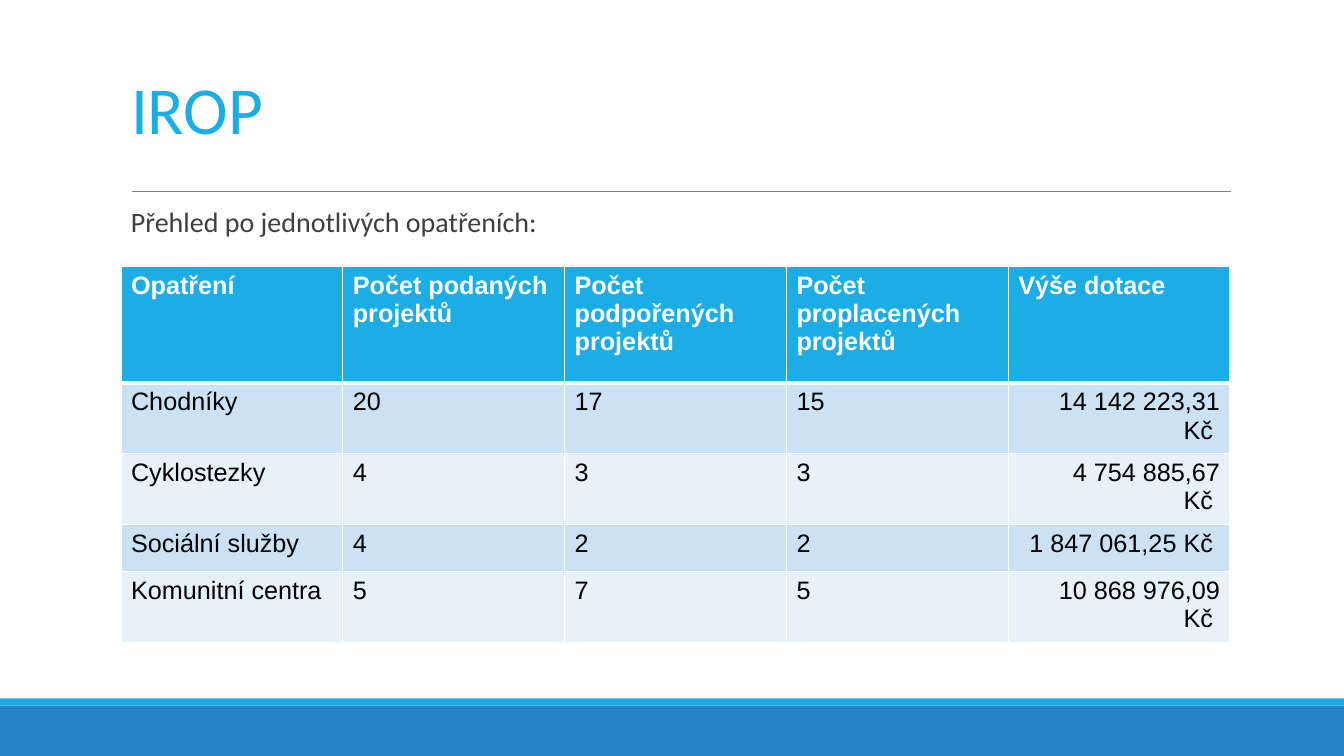
from pptx import Presentation
from pptx.dml.color import RGBColor
from pptx.enum.shapes import MSO_CONNECTOR, MSO_SHAPE
from pptx.enum.text import MSO_ANCHOR, PP_ALIGN
from pptx.oxml.ns import qn
from pptx.util import Pt
from lxml.etree import SubElement

PX = 9144  # 100 px to the inch
HUES = {"sky": "1CADE4", "blue": "2683C6", "rule": "7F7F7F", "text": "3F3F3F",
        "odd": "CBE2F5", "even": "E7F1FA", "white": "FFFFFF", "black": "000000"}
HEADS = ["Opatření", "Počet podaných projektů", "Počet podpořených projektů",
         "Počet proplacených projektů", "Výše dotace"]
ROWS = [
    ["Chodníky", "20", "17", "15", "14 142 223,31 Kč "],
    ["Cyklostezky", "4", "3", "3", "4 754 885,67 Kč "],
    ["Sociální služby", "4", "2", "2", "1 847 061,25 Kč "],
    ["Komunitní centra", "5", "7", "5", "10 868 976,09 Kč "],
]
INDENTS = [40, 40, 10, 40]  # left margins of the amounts


def emu(*sizes):
    return [size * PX for size in sizes]


def hue(name):
    return RGBColor.from_string(HUES[name])


def write(para, text, size, color, font, bold=False):
    run = para.add_run()
    run.text = text
    run.font.size = Pt(size)
    run.font.name = font
    run.font.bold = bold
    run.font.color.rgb = hue(color)


def pad(frame, side, edge):
    frame.margin_left = frame.margin_right = side * PX
    frame.margin_top = frame.margin_bottom = edge * PX
    frame.word_wrap = True


def add_band(slide, box, color):
    band = slide.shapes.add_shape(MSO_SHAPE.RECTANGLE, *emu(*box))
    band.shadow.inherit = False
    band.fill.solid()
    band.fill.fore_color.rgb = hue(color)
    band.line.fill.background()


def add_foot(slide, left, top, width, height):
    strip = 7
    add_band(slide, (left, top + strip, width, height - strip), "blue")
    add_band(slide, (left, top, width, strip), "sky")


def add_head(slide, left, top, width, height):
    # Title
    title = slide.shapes.title
    title.left, title.top, title.width, title.height = emu(left, top, width, height)
    frame = title.text_frame
    pad(frame, 10, 5)
    frame.vertical_anchor = MSO_ANCHOR.BOTTOM
    para = frame.paragraphs[0]
    para.alignment = PP_ALIGN.LEFT
    para.line_spacing = 0.85
    write(para, "IROP", 48, "sky", "Calibri")

    # Rule under the title
    level = top + height + 38
    rule = slide.shapes.add_connector(
        MSO_CONNECTOR.STRAIGHT, *emu(left + 11, level, left + width + 1, level))
    rule.line.color.rgb = hue("rule")
    rule.line.width = Pt(0.75)
    SubElement(rule.element.spPr, qn("a:effectLst"))


def add_intro(slide, left, top, width, height):
    frame = slide.shapes.add_textbox(*emu(left, top, width, height)).text_frame
    pad(frame, 10, 5)
    para = frame.paragraphs[0]
    para.line_spacing = 0.9
    write(para, "Přehled po jednotlivých opatřeních:", 20, "text", "Calibri")


def add_edges(cell, top, bottom):
    props = cell._tc.get_or_add_tcPr()
    for tag, width in (("lnL", 1), ("lnR", 1), ("lnT", top), ("lnB", bottom)):
        edge = SubElement(props, qn(f"a:{tag}"), w=str(Pt(width)))
        fill = SubElement(edge, qn("a:solidFill"))
        SubElement(fill, qn("a:srgbClr"), val=HUES["white"])


def add_grid(slide, left, top, width, height):
    count, first = len(ROWS) + 1, 116
    box = emu(left, top, width, height)
    table = slide.shapes.add_table(count, len(HEADS), *box).table
    for col in table.columns:
        col.width = width * PX // len(HEADS)
    for r, words in enumerate([HEADS] + ROWS):
        head = r == 0
        table.rows[r].height = (first if head else (height - first) // len(ROWS)) * PX
        for c, text in enumerate(words):
            cell = table.cell(r, c)
            amount = c == len(HEADS) - 1 and not head
            cell.margin_left = (INDENTS[r - 1] if amount else 10) * PX
            cell.margin_right = 10 * PX
            cell.margin_top = cell.margin_bottom = 5 * PX
            add_edges(cell, 3 if r == 1 else 1, 3 if head else 1)
            cell.fill.solid()
            cell.fill.fore_color.rgb = hue("sky" if head else "odd" if r % 2 else "even")
            para = cell.text_frame.paragraphs[0]
            para.alignment = PP_ALIGN.RIGHT if amount else PP_ALIGN.LEFT
            write(para, text, 18, "white" if head else "black", "Arial", head)


def main():
    deck = Presentation()
    deck.slide_width, deck.slide_height = emu(1333, 750)
    slide = deck.slides.add_slide(deck.slide_layouts[5])
    add_foot(slide, 0, 693, 1333, 57)
    add_head(slide, 120, 31, 1100, 121)
    add_intro(slide, 120, 202, 1100, 45)
    add_grid(slide, 120, 264, 1100, 304)
    deck.save("out.pptx")


if __name__ == "__main__":
    main()
